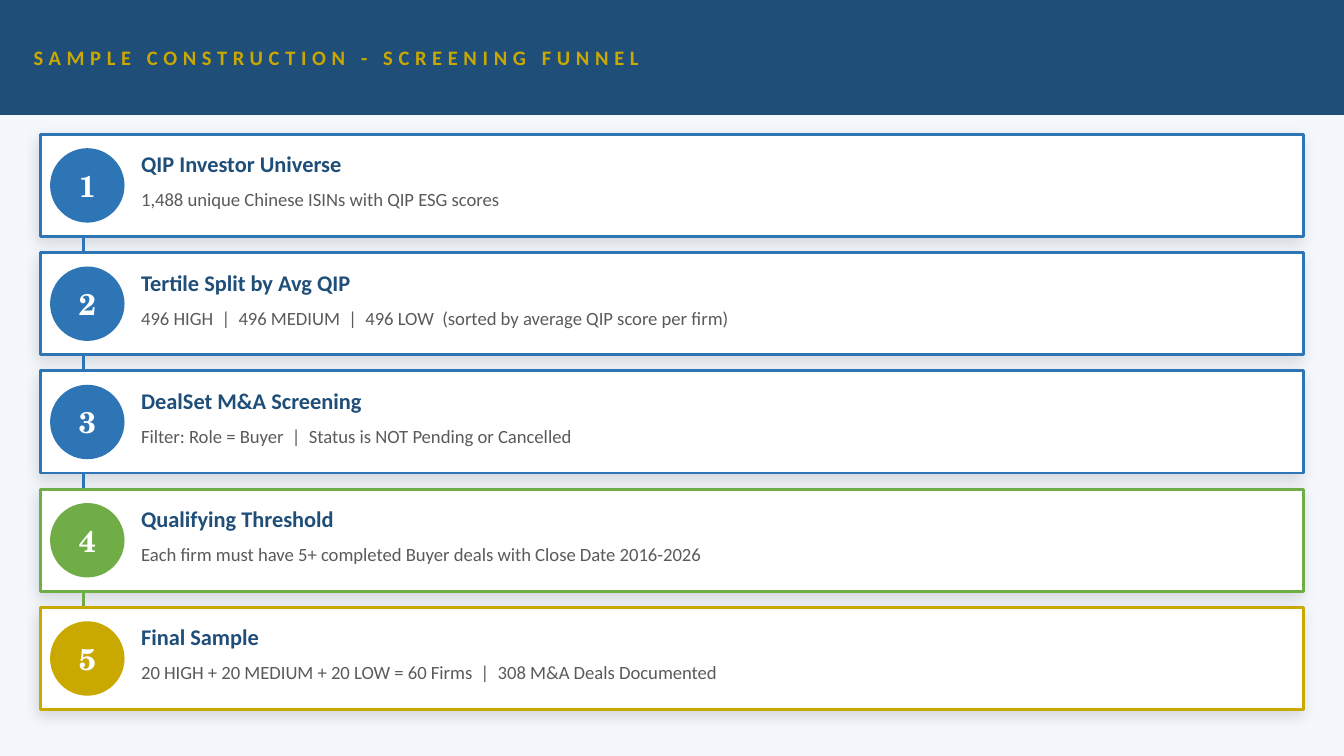
from lxml import etree
from pptx import Presentation
from pptx.dml.color import RGBColor
from pptx.enum.shapes import MSO_CONNECTOR, MSO_SHAPE
from pptx.enum.text import MSO_ANCHOR, PP_ALIGN
from pptx.oxml.ns import qn
from pptx.util import Inches, Pt

RECT, OVAL = MSO_SHAPE.RECTANGLE, MSO_SHAPE.OVAL
STRAIGHT = MSO_CONNECTOR.STRAIGHT
TOP, MIDDLE = MSO_ANCHOR.TOP, MSO_ANCHOR.MIDDLE
LEFT, CENTER = PP_ALIGN.LEFT, PP_ALIGN.CENTER

COLORS = {
    "page": "F4F8FC", "navy": "1F4E79", "blue": "2E75B6", "green": "70AD47",
    "gold": "C9A800", "white": "FFFFFF", "gray": "5A5A5A", "black": "000000",
}
BODY, NUMERAL = "Calibri", "TeX Gyre Schola"
COLS, ROWS = 100, 56.25
STEPS = [
    ("QIP Investor Universe",
     "1,488 unique Chinese ISINs with QIP ESG scores", "blue"),
    ("Tertile Split by Avg QIP",
     "496 HIGH  |  496 MEDIUM  |  496 LOW  (sorted by average QIP score per firm)", "blue"),
    ("DealSet M&A Screening",
     "Filter: Role = Buyer  |  Status is NOT Pending or Cancelled", "blue"),
    ("Qualifying Threshold",
     "Each firm must have 5+ completed Buyer deals with Close Date 2016-2026", "green"),
    ("Final Sample",
     "20 HIGH + 20 MEDIUM + 20 LOW = 60 Firms  |  308 M&A Deals Documented", "gold"),
]
FIRST_ROW, CARD_H, PITCH = 10, 7.6, 8.8


class Deck:
    def __init__(self):
        self.prs = Presentation()
        self.prs.slide_width, self.prs.slide_height = Inches(10), Inches(5.625)
        self.s = self.prs.slides.add_slide(self.prs.slide_layouts[6])
        fill = self.s.background.fill
        fill.solid()
        fill.fore_color.rgb = self.color("page")

    def color(self, name):
        return RGBColor.from_string(COLORS[name])

    def box(self, col, row, cols, rows):
        x, y = self.prs.slide_width / COLS, self.prs.slide_height / ROWS
        return [round(v) for v in (col * x, row * y, cols * x, rows * y)]

    def shape(self, kind, box, fill, line, width=1):
        sp = self.s.shapes.add_shape(kind, *self.box(*box))
        sp.shadow.inherit = False
        sp.fill.solid()
        sp.fill.fore_color.rgb = self.color(fill)
        sp.line.color.rgb = self.color(line)
        sp.line.width = Pt(width)
        return sp

    def card(self, box, line):
        sp = self.shape(RECT, box, "white", line, 1.5)
        effects = sp._element.spPr.find(qn("a:effectLst"))
        shadow = etree.SubElement(
            effects, qn("a:outerShdw"), blurRad=str(Pt(8)), dist=str(Pt(3)),
            dir=str(135 * 60000), algn="bl", rotWithShape="0")
        clr = etree.SubElement(shadow, qn("a:srgbClr"), val=COLORS["black"])
        etree.SubElement(clr, qn("a:alpha"), val="12000")

    def text(self, box, words, size, color, font=BODY, bold=True,
             align=LEFT, anchor=MIDDLE, spacing=0):
        tf = self.s.shapes.add_textbox(*self.box(*box)).text_frame
        tf.word_wrap = True
        tf.vertical_anchor = anchor
        tf.margin_left = tf.margin_right = tf.margin_top = tf.margin_bottom = 0
        p = tf.paragraphs[0]
        p.alignment = align
        r = p.add_run()
        r.text = words
        r.font.name, r.font.size, r.font.bold = font, Pt(size), bold
        r.font.color.rgb = self.color(color)
        if spacing:
            r._r.get_or_add_rPr().set("spc", str(spacing * 100))

    def link(self, col, row, rows, color):
        x, y, _, h = self.box(col, row, 0, rows)
        cn = self.s.shapes.add_connector(STRAIGHT, x, y, x, y + h)
        cn.line.color.rgb = self.color(color)
        cn.line.width = Pt(1.5)
        etree.SubElement(cn._element.spPr, qn("a:effectLst"))

    def step(self, number, row, title, detail, color):
        badge = (3.8, row + 1.1, 5.4, 5.4)
        self.card((3, row, 94, CARD_H), color)
        self.shape(OVAL, badge, color, color)
        self.text(badge, str(number), 16, "white", NUMERAL, align=CENTER)
        self.text((10.5, row + 0.6, 35, 3.2), title, 12, "navy")
        self.text((10.5, row + 4, 85, 2.8), detail, 10, "gray", bold=False, anchor=TOP)


def main():
    deck = Deck()
    deck.shape(RECT, (0, 0, COLS, 8.5), "navy", "navy")
    deck.text((2.5, 0, 95, 8.5), "SAMPLE CONSTRUCTION - SCREENING FUNNEL",
              11, "gold", spacing=3)
    for i, (title, detail, color) in enumerate(STEPS):
        row = FIRST_ROW + i * PITCH
        deck.step(i + 1, row, title, detail, color)
        if i < len(STEPS) - 1:
            deck.link(6.2, row + CARD_H, PITCH - CARD_H, color)
    deck.prs.save("out.pptx")


if __name__ == "__main__":
    main()
